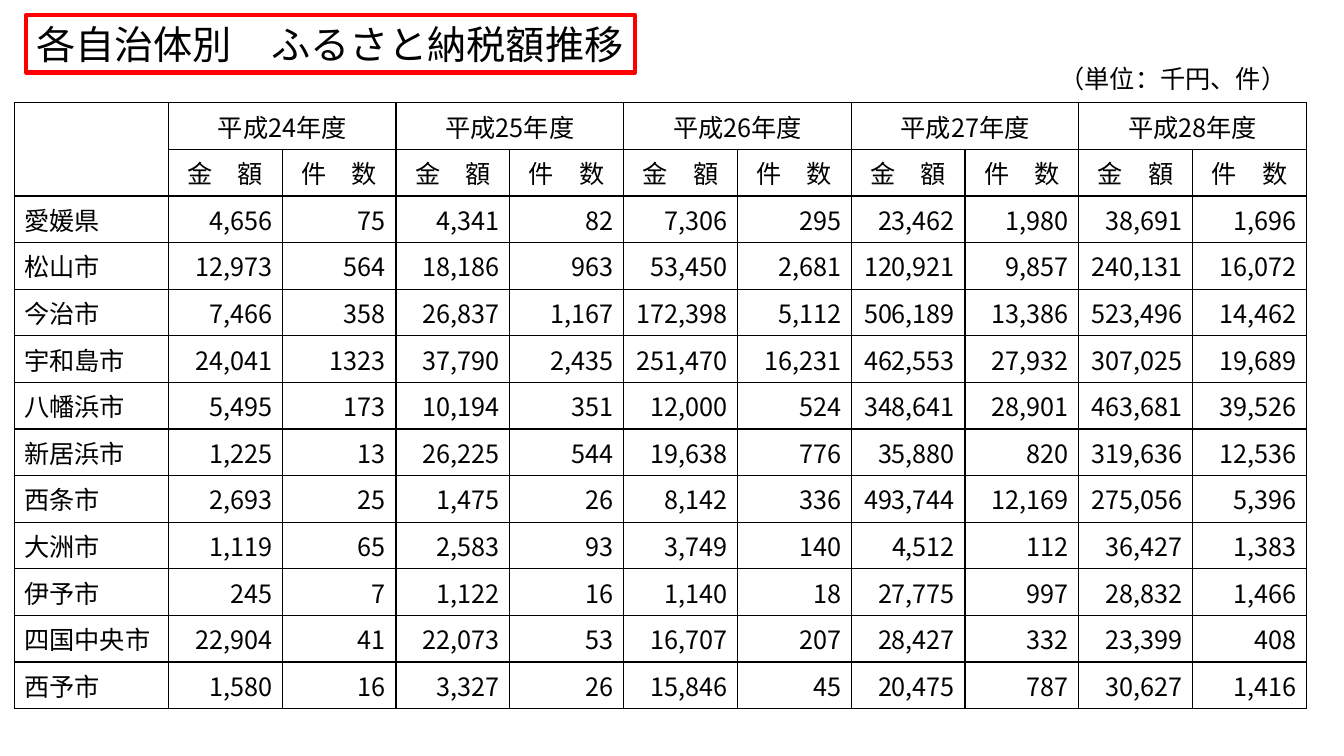
from lxml.etree import SubElement
from pptx import Presentation
from pptx.dml.color import RGBColor
from pptx.enum.shapes import MSO_SHAPE as Shape
from pptx.enum.text import MSO_ANCHOR as Anchor, PP_ALIGN as Align
from pptx.oxml.ns import qn
from pptx.util import Inches, Pt

BLACK = RGBColor(0, 0, 0)
RED = RGBColor(255, 0, 0)
FONT = "Noto Sans CJK JP"
YEARS = range(24, 29)
MEASURES = ["金　額", "件　数"]
HEADER_ROWS = 2
DONATIONS = """
愛媛県 4,656 75 4,341 82 7,306 295 23,462 1,980 38,691 1,696
松山市 12,973 564 18,186 963 53,450 2,681 120,921 9,857 240,131 16,072
今治市 7,466 358 26,837 1,167 172,398 5,112 506,189 13,386 523,496 14,462
宇和島市 24,041 1323 37,790 2,435 251,470 16,231 462,553 27,932 307,025 19,689
八幡浜市 5,495 173 10,194 351 12,000 524 348,641 28,901 463,681 39,526
新居浜市 1,225 13 26,225 544 19,638 776 35,880 820 319,636 12,536
西条市 2,693 25 1,475 26 8,142 336 493,744 12,169 275,056 5,396
大洲市 1,119 65 2,583 93 3,749 140 4,512 112 36,427 1,383
伊予市 245 7 1,122 16 1,140 18 27,775 997 28,832 1,466
四国中央市 22,904 41 22,073 53 16,707 207 28,427 332 23,399 408
西予市 1,580 16 3,327 26 15,846 45 20,475 787 30,627 1,416
"""


def write_text(frame, text, size=18, align=Align.LEFT):
    para = frame.paragraphs[0]
    para.alignment = align
    span = para.add_run()
    span.text = text
    span.font.size = Pt(size)
    span.font.name = FONT
    span.font.color.rgb = BLACK
    SubElement(span.font._element, qn("a:ea"), typeface=FONT)


def fit_frame(frame, wrap):
    frame.word_wrap = wrap
    frame.vertical_anchor = Anchor.MIDDLE
    frame.margin_top = frame.margin_bottom = 0


def add_title(page, left, top, width, height):
    box = page.shapes.add_shape(
        Shape.RECTANGLE, Inches(left), Inches(top), Inches(width), Inches(height))
    box.shadow.inherit = False
    box.fill.background()
    box.line.color.rgb = RED
    box.line.width = Pt(3.25)
    fit_frame(box.text_frame, wrap=False)
    write_text(box.text_frame, "各自治体別　ふるさと納税額推移", size=28)


def add_unit_note(page, left, top, width, height):
    box = page.shapes.add_textbox(
        Inches(left), Inches(top), Inches(width), Inches(height))
    fit_frame(box.text_frame, wrap=True)
    write_text(box.text_frame, "（単位：千円、件）")


def style_cell(cell):
    cell.vertical_anchor = Anchor.MIDDLE
    properties = cell._tc.get_or_add_tcPr()
    for side in ("lnL", "lnR", "lnT", "lnB"):
        border = SubElement(properties, qn(f"a:{side}"), w=str(Pt(1)))
        fill = SubElement(border, qn("a:solidFill"))
        SubElement(fill, qn("a:srgbClr"), val=str(BLACK))
    cell.fill.background()


def add_donation_table(page, left, top, width, height, name_width=1.53):
    records = [line.split() for line in DONATIONS.strip().splitlines()]
    row_count = HEADER_ROWS + len(records)
    value_count = len(YEARS) * len(MEASURES)
    table = page.shapes.add_table(
        row_count, 1 + value_count,
        Inches(left), Inches(top), Inches(width), Inches(height)).table
    table.first_row = table.horz_banding = False
    for row in table.rows:
        row.height = Inches(height / row_count)
    for column in table.columns:
        column.width = Inches((width - name_width) / value_count)
    table.columns[0].width = Inches(name_width)
    for cell in table.iter_cells():
        style_cell(cell)

    table.cell(0, 0).merge(table.cell(1, 0))
    for index, year in enumerate(YEARS):
        first = 1 + index * len(MEASURES)
        heading = table.cell(0, first)
        heading.merge(table.cell(0, first + len(MEASURES) - 1))
        write_text(heading.text_frame, f"平成{year}年度", align=Align.CENTER)
        for offset, measure in enumerate(MEASURES):
            write_text(table.cell(1, first + offset).text_frame, measure,
                       align=Align.CENTER)
    for row, record in enumerate(records, HEADER_ROWS):
        for column, text in enumerate(record):
            write_text(table.cell(row, column).text_frame, text,
                       align=Align.RIGHT if column else Align.LEFT)


def main():
    deck = Presentation()
    deck.slide_width = Inches(13.33)
    deck.slide_height = Inches(7.5)
    page = deck.slides.add_slide(deck.slide_layouts[6])
    add_donation_table(page, 0.14, 1.02, 12.82, 5.99)
    add_title(page, 0.26, 0.15, 6.04, 0.57)
    add_unit_note(page, 10.41, 0.58, 2.56, 0.4)
    deck.save("out.pptx")


if __name__ == "__main__":
    main()
